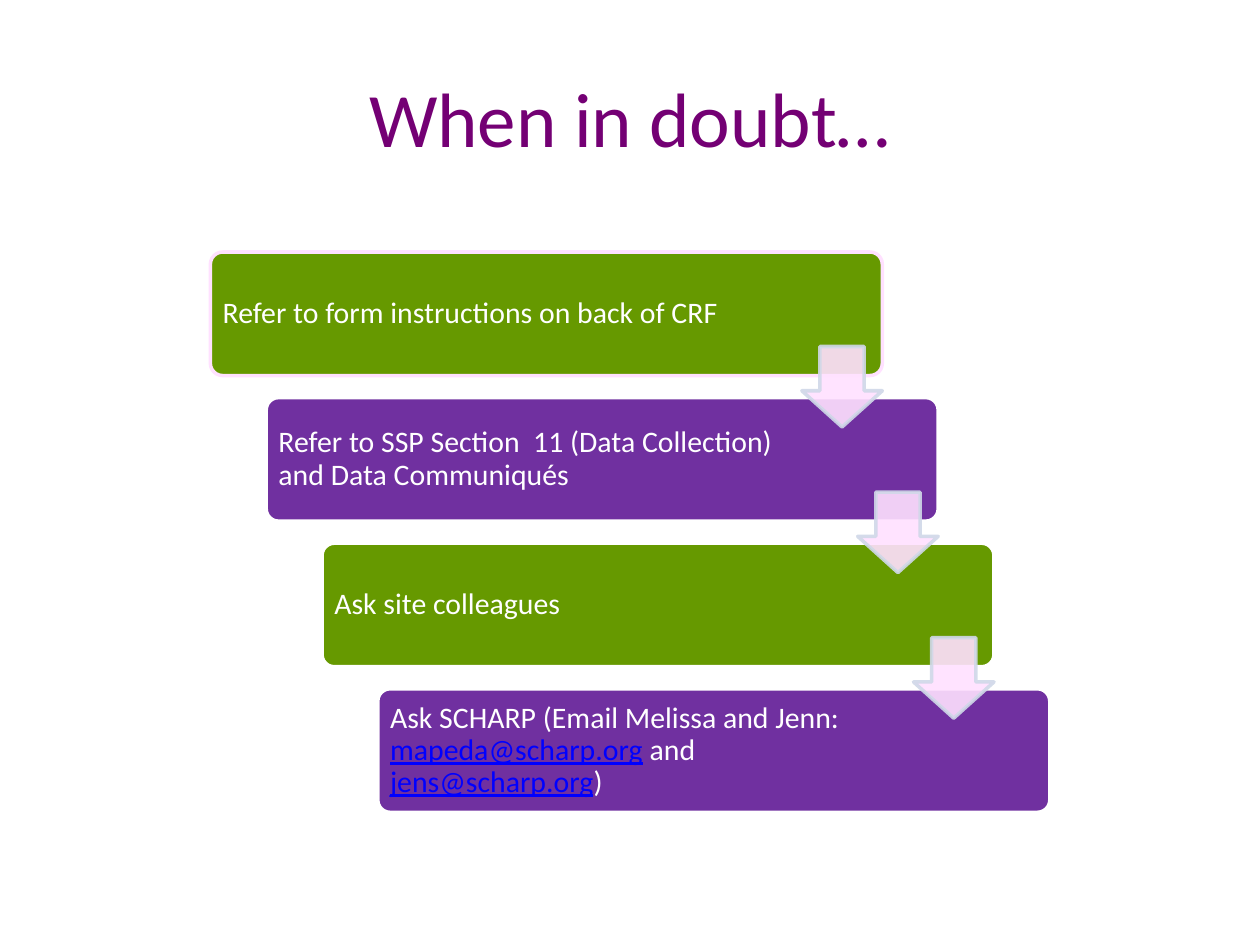
from lxml.etree import SubElement
from pptx import Presentation
from pptx.dml.color import RGBColor as RGB
from pptx.enum.shapes import MSO_SHAPE as Shape
from pptx.enum.text import MSO_ANCHOR as Anchor, PP_ALIGN as Align
from pptx.oxml.ns import qn
from pptx.util import Pt

TITLE = "When in doubt…"
STEPS = [
    ["Refer to form instructions on back of CRF"],
    ["Refer to SSP Section  11 (Data Collection) and Data Communiqués"],
    ["Ask site colleagues"],
    ["Ask SCHARP (Email Melissa and Jenn: ", "mapeda@scharp.org", " and ",
     "jens@scharp.org", ")"],
]

THEME = {
    "font": "Calibri",
    "title_size": 44,
    "step_size": 17,
    "title": RGB.from_string("740074"),
    "text": RGB.from_string("FFFFFF"),
    "email": RGB.from_string("0000FF"),
    "steps": [RGB.from_string("669900"), RGB.from_string("7030A0")],
    "first_border": RGB.from_string("FFE1FF"),
    "border": RGB.from_string("FFFFFF"),
    "arrow": RGB.from_string("FFE1FF"),
    "arrow_border": RGB.from_string("D0D8E8"),
}

LEFT, TOP, WIDTH, HEIGHT = 120.2, 144, 384, 70.6
SHIFT, DROP = 31.9, 83.2
ARROW_SIZE, ARROW_DROP = 46, 54
INSET, ARROW_ROOM = 5, 82


def add_block(slide, preset, left, top, width, height, fill, border):
    block = slide.shapes.add_shape(preset, Pt(left), Pt(top), Pt(width), Pt(height))
    block.shadow.inherit = False
    block.fill.solid()
    block.fill.fore_color.rgb = fill
    block.line.color.rgb = border
    block.line.width = Pt(2)
    return block


def add_step(slide, index, parts):
    step = add_block(slide, Shape.ROUNDED_RECTANGLE, LEFT + index * SHIFT,
                     TOP + index * DROP, WIDTH, HEIGHT, THEME["steps"][index % 2],
                     THEME["border"] if index else THEME["first_border"])
    step.adjustments[0] = 0.1
    frame = step.text_frame
    frame.word_wrap = True
    frame.vertical_anchor = Anchor.MIDDLE
    frame.margin_left = frame.margin_top = frame.margin_bottom = Pt(INSET)
    frame.margin_right = Pt(ARROW_ROOM)
    wording = frame.paragraphs[0]
    wording.alignment = Align.LEFT
    wording.line_spacing = 0.9
    wording.font.name = THEME["font"]
    wording.font.size = Pt(THEME["step_size"])
    wording.font.color.rgb = THEME["text"]
    for part in parts:
        run = wording.add_run()
        run.text = part
        if "@" in part:
            run.font.color.rgb = THEME["email"]
            run.font.underline = True


def add_arrow(slide, index):
    arrow = add_block(slide, Shape.DOWN_ARROW,
                      LEFT + WIDTH - ARROW_SIZE + index * SHIFT,
                      TOP + ARROW_DROP + index * DROP, ARROW_SIZE, ARROW_SIZE,
                      THEME["arrow"], THEME["arrow_border"])
    arrow.adjustments[0] = 0.55
    arrow.adjustments[1] = 0.45
    for color in arrow.element.spPr.iter(qn("a:srgbClr")):
        SubElement(color, qn("a:alpha"), val="90000")


def main():
    deck = Presentation()
    deck.slide_width, deck.slide_height = Pt(720), Pt(540)
    slide = deck.slides.add_slide(deck.slide_layouts[5])

    title = slide.shapes.title
    title.left, title.top, title.width, title.height = Pt(36), Pt(21.6), Pt(648), Pt(90)
    title.text_frame.text = TITLE
    title.text_frame.vertical_anchor = Anchor.MIDDLE
    heading = title.text_frame.paragraphs[0]
    heading.alignment = Align.CENTER
    heading.font.name = THEME["font"]
    heading.font.size = Pt(THEME["title_size"])
    heading.font.color.rgb = THEME["title"]

    for index, parts in enumerate(STEPS):
        add_step(slide, index, parts)
    for index in range(len(STEPS) - 1):
        add_arrow(slide, index)

    deck.save("out.pptx")


if __name__ == "__main__":
    main()
